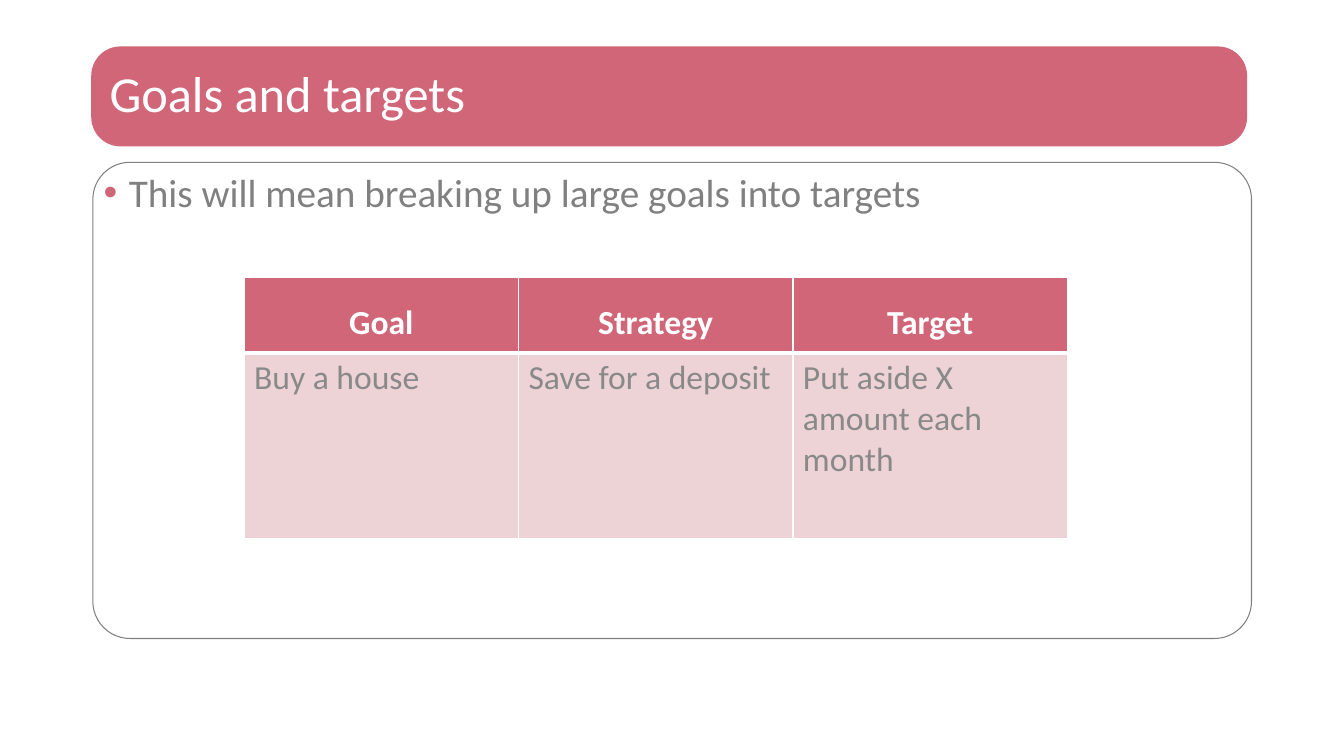
from lxml import etree
from pptx import Presentation
from pptx.dml.color import RGBColor
from pptx.enum.shapes import MSO_SHAPE
from pptx.enum.text import MSO_ANCHOR, MSO_AUTO_SIZE, PP_ALIGN
from pptx.oxml.ns import qn
from pptx.util import Cm, Pt

ROUNDED = MSO_SHAPE.ROUNDED_RECTANGLE
TOP, MIDDLE = MSO_ANCHOR.TOP, MSO_ANCHOR.MIDDLE
LEFT, CENTER = PP_ALIGN.LEFT, PP_ALIGN.CENTER
NO_AUTOFIT = MSO_AUTO_SIZE.NONE

ROSE = RGBColor(0xD1, 0x66, 0x78)
PALE_ROSE = RGBColor(0xEE, 0xD3, 0xD6)
WHITE = RGBColor(0xFF, 0xFF, 0xFF)
GREY = RGBColor(0x80, 0x80, 0x80)
CELL_GREY = RGBColor(0x89, 0x89, 0x89)

GOALS = [["Goal", "Strategy", "Target"],
         ["Buy a house", "Save for a deposit", "Put aside X amount each month"]]


def add_element(parent, tag, **attrs):
    return etree.SubElement(parent, qn(tag), attrs)


def set_attributes(target, values):
    for name, value in values.items():
        setattr(target, name, value)


def write(p, text, size, color, bold=False):
    r = p.add_run()
    r.text = text
    set_attributes(r.font, {"name": "Calibri", "size": Pt(size), "bold": bold})
    r.font.color.rgb = color


def set_frame(tf, anchor):
    set_attributes(tf, {"margin_left": 0, "margin_top": 0, "margin_right": 0,
                        "margin_bottom": 0, "word_wrap": True,
                        "auto_size": NO_AUTOFIT, "vertical_anchor": anchor})


def add_title(s, left, top, width, height, text):
    # Banner, sent behind the title text
    banner = s.shapes.add_shape(ROUNDED, left, top, width, height)
    banner.adjustments[0] = 0.293
    banner.shadow.inherit = False
    banner.fill.solid()
    banner.fill.fore_color.rgb = ROSE
    banner.line.fill.background()
    s.shapes.title.element.addprevious(banner.element)

    # Title text
    title = s.shapes.title
    set_attributes(title, {"left": left + Cm(0.46), "top": top + Cm(0.4),
                           "width": width - Cm(0.74), "height": height - Cm(0.7)})
    set_frame(title.text_frame, MIDDLE)
    p = title.text_frame.paragraphs[0]
    set_attributes(p, {"alignment": LEFT, "line_spacing": 0.8})
    write(p, text, 36, WHITE)


def add_body(s, left, top, width, height, text):
    body = s.placeholders[1]
    set_attributes(body, {"left": left, "top": top, "width": width, "height": height})

    # Rounded outline
    geometry = add_element(body.element.spPr, "a:prstGeom", prst="roundRect")
    guides = add_element(geometry, "a:avLst")
    add_element(guides, "a:gd", name="adj", fmla="val 7800")
    body.line.color.rgb = GREY
    body.line.width = Pt(0.75)

    # Bulleted text
    set_frame(body.text_frame, TOP)
    p = body.text_frame.paragraphs[0]
    pPr = p._p.get_or_add_pPr()
    pPr.set("marL", str(Cm(0.635)))
    pPr.set("indent", str(-Cm(0.635)))
    add_element(add_element(pPr, "a:buClr"), "a:srgbClr", val=str(ROSE))
    add_element(pPr, "a:buFont", typeface="Arial")
    add_element(pPr, "a:buChar", char="•")
    set_attributes(p, {"alignment": LEFT, "line_spacing": 0.9, "space_before": Pt(0)})
    write(p, text, 28, GREY)


def set_borders(cell, widths):
    tcPr = cell._tc.get_or_add_tcPr()
    for side, width in widths.items():
        ln = add_element(tcPr, "a:ln" + side, w=str(Pt(width)))
        add_element(add_element(ln, "a:solidFill"), "a:srgbClr", val=str(WHITE))


def add_goals_table(s, left, top, width, row_heights, rows):
    table = s.shapes.add_table(len(rows), len(rows[0]), left, top, width,
                               sum(row_heights)).table
    for row, height in zip(table.rows, row_heights):
        row.height = height
    for i, texts in enumerate(rows):
        header = i == 0
        for j, text in enumerate(texts):
            cell = table.cell(i, j)
            # A thicker rule divides the header from the goals
            set_borders(cell, {"L": 1, "R": 1, "T": 1 if header else 3,
                               "B": 3 if header else 1})
            cell.fill.solid()
            cell.fill.fore_color.rgb = ROSE if header else PALE_ROSE
            p = cell.text_frame.paragraphs[0]
            if header:
                set_attributes(p, {"alignment": CENTER, "line_spacing": 1.5})
            write(p, text, 24, WHITE if header else CELL_GREY, bold=header)


def main():
    prs = Presentation()
    prs.slide_width, prs.slide_height = Cm(33.87), Cm(19.05)
    s = prs.slides.add_slide(prs.slide_layouts[1])
    add_title(s, Cm(2.3), Cm(1.17), Cm(29.13), Cm(2.52), "Goals and targets")
    add_body(s, Cm(2.34), Cm(4.09), Cm(29.2), Cm(12),
             "This will mean breaking up large goals into targets")
    add_goals_table(s, Cm(6.15), Cm(6.99), Cm(20.75), [Cm(1.9), Cm(4.67)], GOALS)
    prs.save("out.pptx")


if __name__ == "__main__":
    main()
